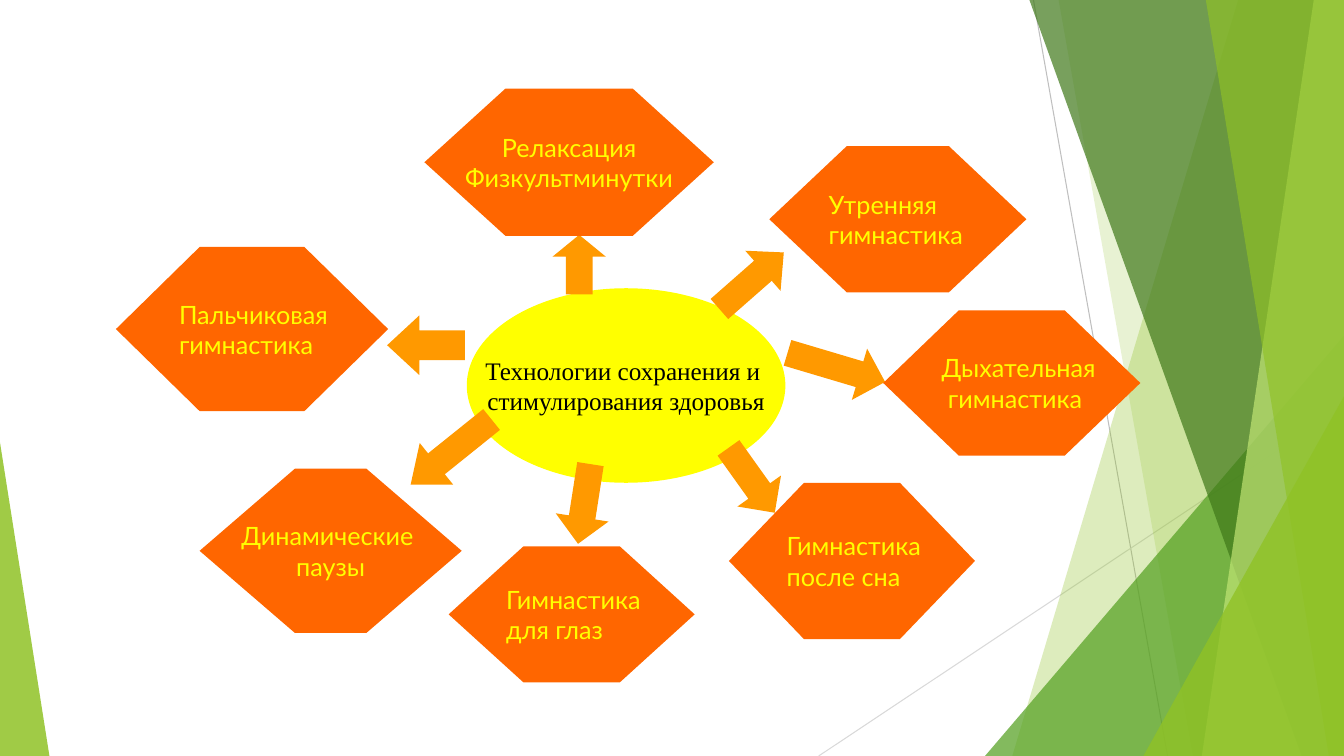
from lxml import etree
from pptx import Presentation
from pptx.dml.color import RGBColor
from pptx.enum.shapes import MSO_CONNECTOR, MSO_SHAPE
from pptx.enum.text import MSO_ANCHOR, PP_ALIGN
from pptx.oxml.ns import qn
from pptx.util import Inches, Pt

WIDTH, HEIGHT = 13.33, 7.5
GREEN = "90C226"
LEFT, CENTER = PP_ALIGN.LEFT, PP_ALIGN.CENTER

RAYS = [
    ((10.25, 0), (11.58, HEIGHT), "BFBFBF"),
    ((WIDTH, 4.03), (8.12, HEIGHT), "D9D9D9"),
]

# Top-left x, bottom-left x, colour, opacity; each band reaches the right edge
BANDS_BEHIND = [(12.28, 10.04, GREEN, 30), (10.5, 11.83, GREEN, 20)]
BANDS_FRONT = [
    (10.21, 12.91, "3F7819", 70),
    (13.03, 11.92, "C0E474", 70),
    (11.96, 13.18, GREEN, 65),
]

# Box, rotation, preset, head length
ARROWS = [
    ((5.48, 2.33, 0.53, 0.59), 0, MSO_SHAPE.UP_ARROW, 0.41),
    ((3.84, 3.13, 0.77, 0.59), 0, MSO_SHAPE.LEFT_ARROW, 0.54),
    ((7.79, 3.38, 1.01, 0.53), 16.6, MSO_SHAPE.RIGHT_ARROW, 0.5),
    ((5.53, 4.6, 0.53, 0.8), 8.9, MSO_SHAPE.DOWN_ARROW, 0.5),
    ((7.03, 2.52, 0.85, 0.53), 318.7, MSO_SHAPE.RIGHT_ARROW, 0.52),
    ((7.19, 4.37, 0.53, 0.79), 324.5, MSO_SHAPE.DOWN_ARROW, 0.5),
    ((3.96, 4.22, 1.03, 0.53), 321.2, MSO_SHAPE.LEFT_ARROW, 0.62),
]

# Box, corner inset, alignment, lines of text
PRACTICES = [
    ((8.76, 3.08, 2.55, 1.44), 0.52, LEFT, ["Дыхательная", " гимнастика"]),
    ((4.21, 0.88, 2.87, 1.46), 0.55, CENTER, ["Релаксация", "Физкультминутки"]),
    ((1.15, 2.45, 2.7, 1.63), 0.51, LEFT, ["Пальчиковая", "гимнастика"]),
    ((4.45, 5.42, 2.44, 1.35), 0.55, LEFT, ["Гимнастика", "для глаз"]),
    ((7.63, 1.45, 2.55, 1.45), 0.53, LEFT, ["Утренняя", "гимнастика"]),
    ((7.23, 4.79, 2.44, 1.55), 0.48, LEFT, ["Гимнастика", "после сна"]),
    ((1.98, 4.65, 2.6, 1.63), 0.58, CENTER, ["Динамические ", "паузы"]),
]


def rgb(color):
    return RGBColor.from_string(color)


def paint(shape, color, opacity=100):
    """Give the shape a plain fill with no outline or shadow."""
    shape.shadow.inherit = False
    shape.line.fill.background()
    shape.fill.solid()
    shape.fill.fore_color.rgb = rgb(color)
    if opacity < 100:
        srgb = shape.fill._xPr.find(".//" + qn("a:srgbClr"))
        etree.SubElement(srgb, qn("a:alpha"), val=str(opacity * 1000))


def add_preset(slide, preset, box, color, opacity=100):
    shape = slide.shapes.add_shape(preset, *map(Inches, box))
    paint(shape, color, opacity)
    return shape


def add_ray(slide, start, end, color):
    ray = slide.shapes.add_connector(
        MSO_CONNECTOR.STRAIGHT, *map(Inches, start + end))
    ray.line.color.rgb = rgb(color)
    ray.line.width = Pt(0.75)
    etree.SubElement(ray._element.spPr, qn("a:effectLst"))


def add_band(slide, top_x, bottom_x, color, opacity):
    corners = [(top_x, 0), (WIDTH, 0), (WIDTH, HEIGHT), (bottom_x, HEIGHT)]
    points = [(Inches(x), Inches(y)) for x, y in corners]
    outline = slide.shapes.build_freeform(*points[0])
    outline.add_line_segments(points[1:])
    paint(outline.convert_to_shape(), color, opacity)


def add_triangle(slide, box, apex, color, opacity):
    triangle = add_preset(
        slide, MSO_SHAPE.ISOSCELES_TRIANGLE, box, color, opacity)
    triangle.adjustments[0] = apex


def add_arrow(slide, box, rotation, preset, head):
    arrow = add_preset(slide, preset, box, "FF9900")
    arrow.adjustments[1] = head
    arrow.rotation = rotation


def write(shape, lines, align, font, color):
    frame = shape.text_frame
    frame.word_wrap = False
    frame.vertical_anchor = MSO_ANCHOR.MIDDLE
    for index, line in enumerate(lines):
        paragraph = frame.add_paragraph() if index else frame.paragraphs[0]
        paragraph.alignment = align
        run = paragraph.add_run()
        run.text = line
        run.font.name = font
        run.font.size = Pt(18)
        run.font.color.rgb = rgb(color)


def add_practice(slide, box, inset, align, lines):
    hexagon = add_preset(slide, MSO_SHAPE.HEXAGON, box, "FF6600")
    hexagon.adjustments[0] = inset
    write(hexagon, lines, align, "Lato", "FFFF00")


def add_backdrop(slide):
    for ray in RAYS:
        add_ray(slide, *ray)
    for band in BANDS_BEHIND:
        add_band(slide, *band)
    add_triangle(slide, (9.77, 3.33, 3.56, 4.17), 1, "54A021", 72)
    for band in BANDS_FRONT:
        add_band(slide, *band)
    add_triangle(slide, (11.34, 3.93, 1.99, 3.57), 1, GREEN, 80)
    add_triangle(slide, (0, 4.39, 0.49, 3.11), 0, GREEN, 85)


def main():
    deck = Presentation()
    deck.slide_width, deck.slide_height = Inches(WIDTH), Inches(HEIGHT)
    slide = deck.slides.add_slide(deck.slide_layouts[6])

    add_backdrop(slide)
    topic = add_preset(
        slide, MSO_SHAPE.OVAL, (4.63, 2.86, 3.16, 1.93), "FFFF00")
    write(topic, ["Технологии сохранения и ", "стимулирования здоровья"],
          CENTER, "Times New Roman", "000000")
    for arrow in ARROWS:
        add_arrow(slide, *arrow)
    for practice in PRACTICES:
        add_practice(slide, *practice)

    deck.save("out.pptx")


if __name__ == "__main__":
    main()
